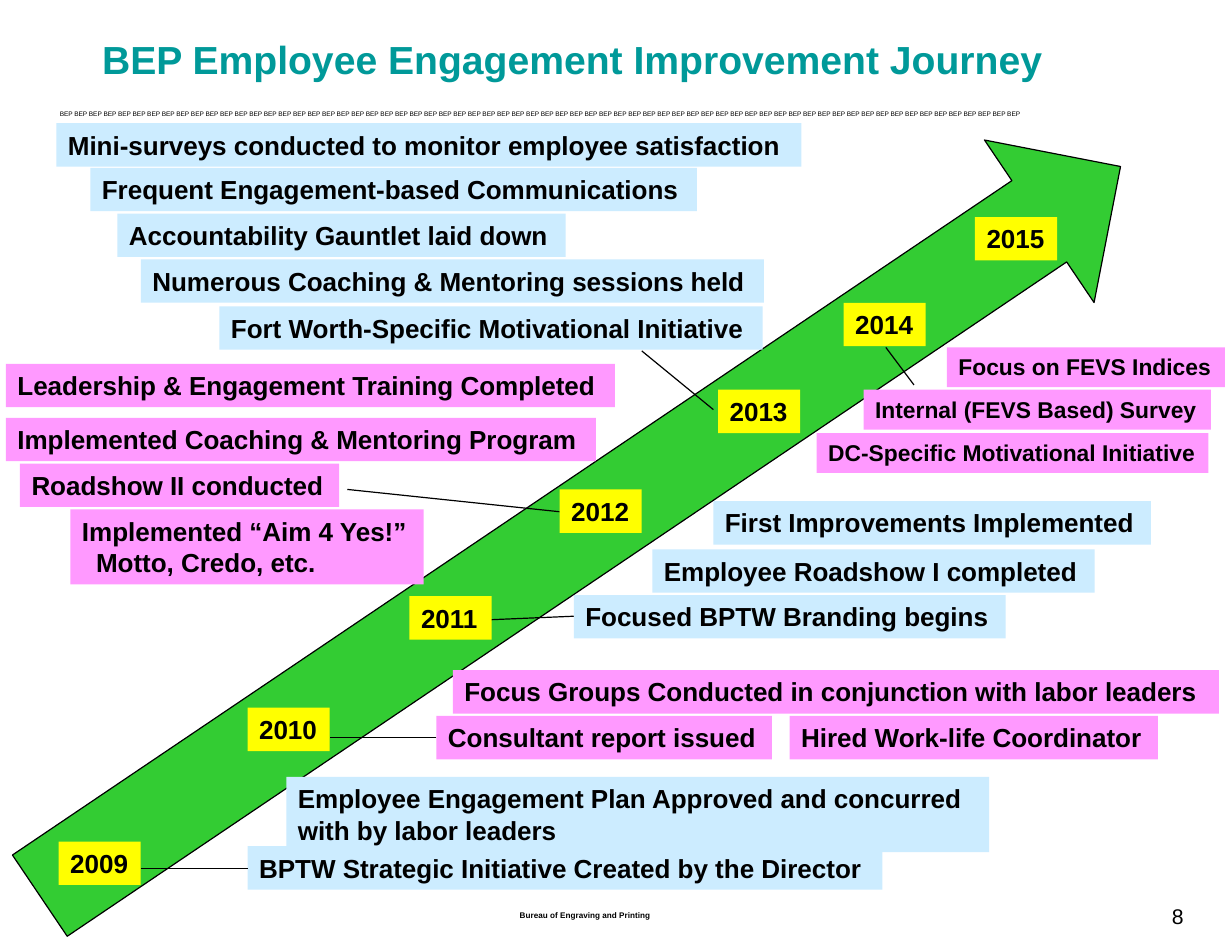
import pptx
import pptx.util
import pptx.dml.color
import pptx.enum.shapes
import pptx.enum.text
import pptx.oxml.ns
import lxml.etree

COLUMNS, ROWS = 105, 80
COLORS = {"sky": "CCECFF", "pink": "FF99FF", "yellow": "FFFF00",
          "green": "33CC33", "teal": "009999", "black": "000000"}
LABEL_HEIGHT, SMALL_HEIGHT, DOUBLE_HEIGHT = 3.7, 3.4, 6.4
MOTTO = "Motto, Credo, etc."

# left column, top row, width in columns, text
SKY_LABELS = [
    (4.8, 10.5, 63.5, "Mini-surveys conducted to monitor employee satisfaction"),
    (7.7, 14.3, 51.7, "Frequent Engagement-based Communications"),
    (10, 18.2, 38.2, "Accountability Gauntlet laid down"),
    (12, 22.1, 53.1, "Numerous Coaching & Mentoring sessions held"),
    (18.7, 26.1, 46.3, "Fort Worth-Specific Motivational Initiative"),
    (60.8, 42.7, 37.3, "First Improvements Implemented"),
    (55.6, 46.8, 37.7, "Employee Roadshow I completed"),
    (48.9, 50.7, 36.8, "Focused BPTW Branding begins"),
    (24.4, 66.2, 59.9, "Employee Engagement Plan Approved and concurred\nwith by labor leaders"),
    (21.1, 72.1, 54.1, "BPTW Strategic Initiative Created by the Director"),
]
PINK_LABELS = [
    (0.5, 31, 51.9, "Leadership & Engagement Training Completed"),
    (0.5, 35.6, 50.3, "Implemented Coaching & Mentoring Program"),
    (1.7, 39.5, 27.2, "Roadshow II conducted"),
    (6, 43.4, 30.1, "Implemented “Aim 4 Yes!”\n" + MOTTO),
    (38.6, 57.1, 65.3, "Focus Groups Conducted in conjunction with labor leaders"),
    (37.2, 61, 28.6, "Consultant report issued"),
    (67.3, 61, 31.4, "Hired Work-life Coordinator"),
]
SMALL_PINK_LABELS = [
    (80.7, 29.6, 23.7, "Focus on FEVS Indices"),
    (73.6, 33.2, 29.6, "Internal (FEVS Based) Survey"),
    (69.6, 36.9, 33.4, "DC-Specific Motivational Initiative"),
]
CONNECTORS = [
    (21.1, 74, 12, 74),
    (37.2, 62.8, 28.1, 62.8),
    (48.9, 52.5, 41.8, 52.8),
    (47.7, 43.6, 29.6, 41.7),
    (60.8, 34.9, 54.7, 29.9),
    (77.9, 32.8, 75.5, 29.6),
]
YEAR_SPOTS = [(5, 71.7), (21.1, 60.3), (34.9, 50.8), (47.7, 41.7),
              (61.2, 33.2), (71.9, 25.8), (83.1, 18.5)]


def color(name):
    return pptx.dml.color.RGBColor.from_string(COLORS[name])


class Slide:
    """Holds the text style and the page being filled; lengths are grid units."""

    def __init__(self, deck):
        self.style = {"name": "Arial", "bold": True}
        self.column = deck.slide_width / COLUMNS
        self.row = deck.slide_height / ROWS
        self.page = deck.slides.add_slide(deck.slide_layouts[5])

    def grid(self, left, top, width, height):
        return [round(value * unit) for value, unit in
                zip((left, top, width, height), (self.column, self.row) * 2)]

    def set_text(self, box, text, size, ink="black", wrap=False, fit=True, **frame_values):
        frame = box.text_frame
        frame.text = text
        values = {"word_wrap": wrap,
                  "vertical_anchor": pptx.enum.text.MSO_ANCHOR.TOP, **frame_values}
        if fit:
            values["auto_size"] = pptx.enum.text.MSO_AUTO_SIZE.SHAPE_TO_FIT_TEXT
        for name, value in values.items():
            setattr(frame, name, value)
        for para in frame.paragraphs:
            para.alignment = pptx.enum.text.PP_ALIGN.LEFT
            for span in para.runs:
                for name, value in {**self.style, "size": pptx.util.Pt(size)}.items():
                    setattr(span.font, name, value)
                span.font.color.rgb = color(ink)

    def title(self, place, text, size, ink):
        box = self.page.shapes.title
        box.left, box.top, box.width, box.height = self.grid(*place)
        self.set_text(box, text, size, ink, wrap=True, fit=False,
                      vertical_anchor=pptx.enum.text.MSO_ANCHOR.MIDDLE)

    def caption(self, place, text, size, bold=False, margin=0):
        box = self.page.shapes.add_textbox(*self.grid(*place))
        sides = ("left", "top", "right", "bottom")
        margins = {f"margin_{side}": pptx.util.Inches(margin) for side in sides}
        self.set_text(box, text, size, **margins)
        box.text_frame.paragraphs[0].runs[0].font.bold = bold

    def shape(self, kind, place, fill):
        box = self.page.shapes.add_shape(kind, *self.grid(*place))
        box.shadow.inherit = False
        box.fill.solid()
        box.fill.fore_color.rgb = color(fill)
        box.line.fill.background()
        return box

    def arrow(self, place, fill, rotation):
        box = self.shape(pptx.enum.shapes.MSO_SHAPE.RIGHT_ARROW, place, fill)
        box.rotation = rotation
        self.outline(box)

    def label(self, left, top, width, text, fill, size=16, height=LABEL_HEIGHT):
        if "\n" in text:
            height = DOUBLE_HEIGHT
        box = self.shape(pptx.enum.shapes.MSO_SHAPE.RECTANGLE,
                         (left, top, width, height), fill)
        self.set_text(box, text, size)
        for para in box.text_frame.paragraphs:
            if para.text == MOTTO:
                para._p.get_or_add_pPr().set("marL", str(pptx.util.Inches(0.12)))

    def connector(self, *ends):
        line = self.page.shapes.add_connector(
            pptx.enum.shapes.MSO_CONNECTOR.STRAIGHT, *self.grid(*ends))
        self.outline(line)
        lxml.etree.SubElement(line._element.spPr, pptx.oxml.ns.qn("a:effectLst"))

    def outline(self, item):
        item.line.color.rgb = color("black")
        item.line.width = pptx.util.Pt(0.75)


def main():
    deck = pptx.Presentation()
    deck.slide_width = pptx.util.Inches(10.5)
    deck.slide_height = pptx.util.Inches(8)
    slide = Slide(deck)

    slide.title((7.7, 1.5, 86.9, 7.1), "BEP Employee Engagement Improvement Journey", 24, "teal")
    slide.caption((98.9, 76, 4.6, 3.2), "8", 13, margin=0.1)
    slide.caption((44.3, 77.6, 13, 0.8), "Bureau of Engraving and Printing", 5, bold=True)
    slide.caption((5.1, 9.4, 83.1, 0.7), " ".join(["BEP"] * 66), 4)
    slide.arrow((-6.1, 36.9, 111.1, 16.7), "green", 326)

    for label in SKY_LABELS:
        slide.label(*label, "sky")
    for label in PINK_LABELS:
        slide.label(*label, "pink")
    for label in SMALL_PINK_LABELS:
        slide.label(*label, "pink", 14, SMALL_HEIGHT)
    for ends in CONNECTORS:
        slide.connector(*ends)
    for year, (left, top) in enumerate(YEAR_SPOTS, 2009):
        slide.label(left, top, 7, str(year), "yellow")

    deck.save("out.pptx")


if __name__ == "__main__":
    main()
